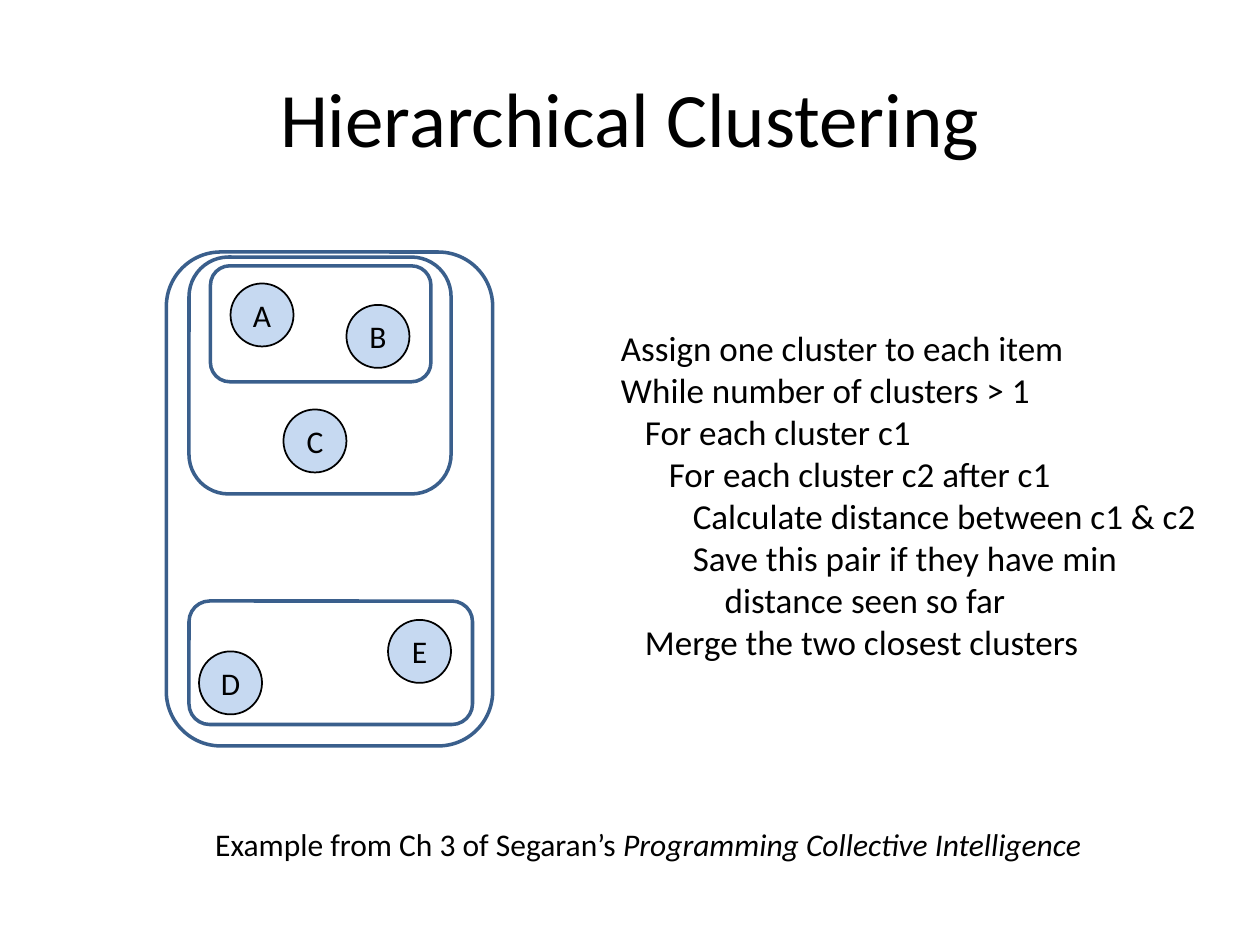
import dataclasses

import pptx
import pptx.dml.color
import pptx.enum.shapes
import pptx.enum.text
import pptx.util

Inches = pptx.util.Inches
Shape = pptx.enum.shapes.MSO_SHAPE
Align = pptx.enum.text.PP_ALIGN
Anchor = pptx.enum.text.MSO_ANCHOR


@dataclasses.dataclass(frozen=True)
class Theme:
    font: str = "Calibri"
    ink: str = "000000"
    item: str = "C6D9F1"
    ring: str = "3A5F8C"
    title: int = 44
    code: int = 20
    label: int = 18


THEME = Theme()
STEP = 0.19  # indent of one code level

# left, top, width, height within the diagram
RINGS = [
    (0.35, 0.11, 1.75, 0.92),
    (0.18, 0.04, 2.08, 1.88),
    (0.18, 2.77, 2.25, 0.98),
    (0, 0, 2.59, 3.92),
]
# label, left, top within the diagram
ITEMS = [
    ("A", 0.51, 0.25),
    ("B", 1.43, 0.42),
    ("C", 0.93, 1.25),
    ("D", 0.26, 3.17),
    ("E", 1.76, 2.92),
]
SIZE = 0.5

# indent level, text
CODE = [
    (0, "Assign one cluster to each item"),
    (0, "While number of clusters > 1"),
    (1, "For each cluster c1"),
    (2, "For each cluster c2 after c1"),
    (3, "Calculate distance between c1 & c2"),
    (3, "Save this pair if they have min"),
    (4.33, "distance seen so far"),
    (1, "Merge the two closest clusters"),
]


def color(code):
    return pptx.dml.color.RGBColor.from_string(code)


def style(para, size, align=Align.LEFT):
    para.alignment = align
    for run in para.runs:
        run.font.name = THEME.font
        run.font.size = pptx.util.Pt(size)
        run.font.color.rgb = color(THEME.ink)


def place(shape, box):
    shape.left, shape.top, shape.width, shape.height = map(Inches, box)


def add_text(slide, box):
    frame = slide.shapes.add_textbox(*map(Inches, box)).text_frame
    frame.word_wrap = True
    return frame


def add_form(slide, kind, box, line, width):
    form = slide.shapes.add_shape(kind, *map(Inches, box))
    form.shadow.inherit = False
    form.line.color.rgb = color(line)
    form.line.width = pptx.util.Pt(width)
    return form


def add_title(slide, box):
    title = slide.shapes.title
    place(title, box)
    frame = title.text_frame
    frame.text = "Hierarchical Clustering"
    frame.vertical_anchor = Anchor.MIDDLE
    style(frame.paragraphs[0], THEME.title, Align.CENTER)


def add_nest(slide, left, top):
    """Draw the items and the nested cluster outlines around them."""
    for label, x, y in ITEMS:
        item = add_form(slide, Shape.OVAL, (left + x, top + y, SIZE, SIZE),
                        THEME.ink, 1)
        item.fill.solid()
        item.fill.fore_color.rgb = color(THEME.item)
        frame = item.text_frame
        frame.text = label
        frame.word_wrap = False
        frame.vertical_anchor = Anchor.MIDDLE
        style(frame.paragraphs[0], THEME.label, Align.CENTER)
    for x, y, width, height in RINGS:
        ring = add_form(slide, Shape.ROUNDED_RECTANGLE,
                        (left + x, top + y, width, height), THEME.ring, 2)
        ring.fill.background()


def add_code(slide, box):
    frame = add_text(slide, box)
    frame.text = "\n".join(text for _, text in CODE)
    for para, (level, _) in zip(frame.paragraphs, CODE):
        style(para, THEME.code)
        props = para._p.get_or_add_pPr()
        props.set("marL", str(Inches(level * STEP)))
        props.set("indent", "0")


def add_credit(slide, box):
    para = add_text(slide, box).paragraphs[0]
    para.text = "Example from Ch 3 of Segaran’s "
    book = para.add_run()
    book.text = "Programming Collective Intelligence"
    book.font.italic = True
    style(para, THEME.label, Align.CENTER)


def main():
    deck = pptx.Presentation()
    deck.slide_width, deck.slide_height = Inches(10), Inches(7.5)
    slide = deck.slides.add_slide(deck.slide_layouts[5])
    add_title(slide, (0.5, 0.3, 9, 1.25))
    add_nest(slide, 1.32, 2)
    add_code(slide, (4.83, 2.54, 4.92, 2.79))
    add_credit(slide, (1.48, 6.5, 7.33, 0.4))
    deck.save("out.pptx")


if __name__ == "__main__":
    main()
